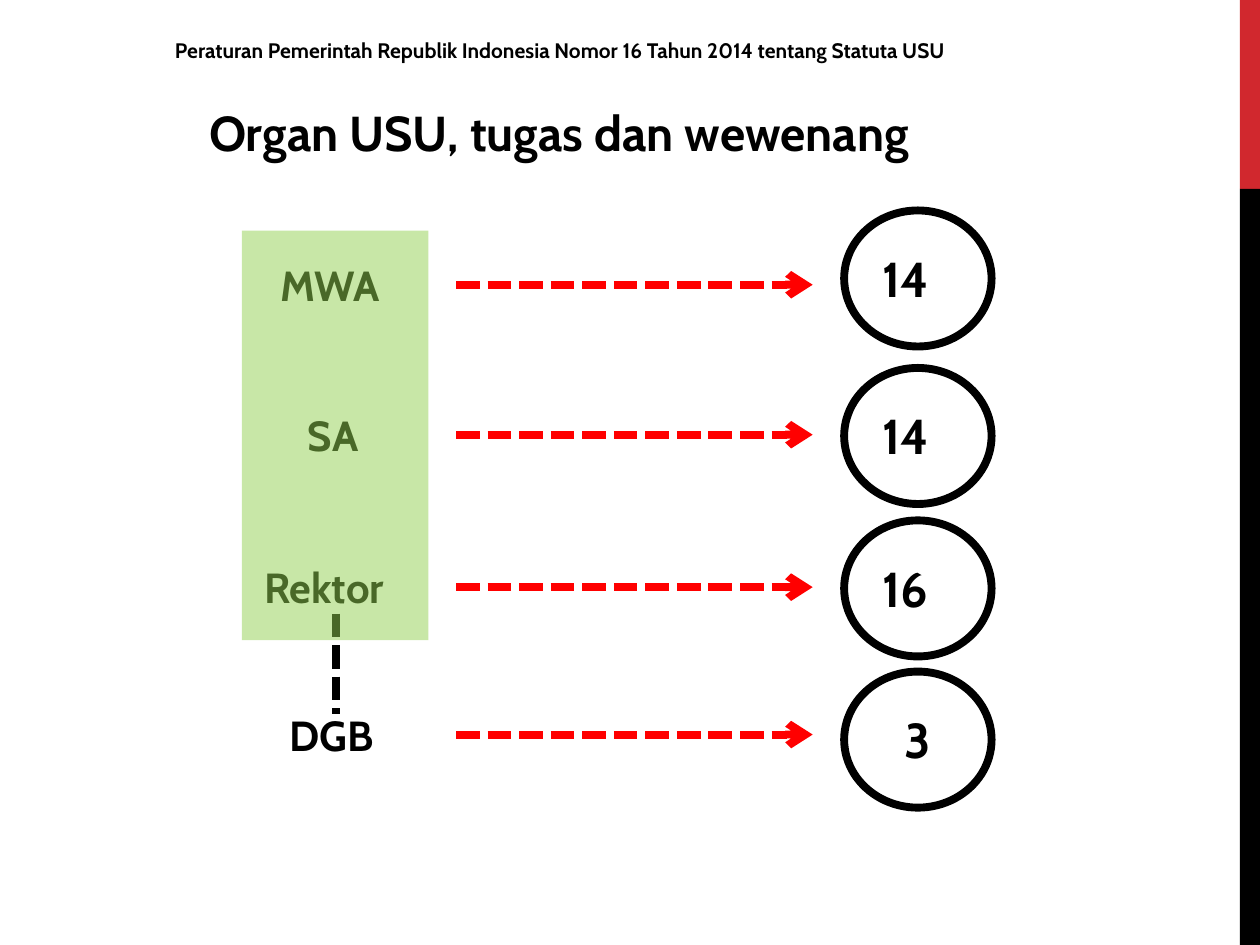
from dataclasses import dataclass

from pptx import Presentation
from pptx.dml.color import RGBColor
from pptx.enum.dml import MSO_LINE
from pptx.enum.shapes import MSO_CONNECTOR, MSO_SHAPE
from pptx.enum.text import MSO_ANCHOR, PP_ALIGN
from pptx.oxml.ns import qn
from pptx.util import Inches, Pt
from lxml.etree import SubElement


@dataclass(frozen=True)
class Theme:
    """Colours, font and type sizes of the slide."""
    ink: str = "000000"
    accent: str = "D1282E"
    arrow: str = "FF0000"
    highlight: str = "92D050"
    font: str = "Cabin"
    title: int = 28
    label: int = 24
    note: int = 12
    stroke: float = 4.5


THEME = Theme()
AXIS = 2.67
ORGANS = [
    ("MWA", 1.08, 2.01, "14", 6.91, 0.7, 1.67),
    ("SA", 0.65, 3.2, "14", 6.91, 0.7, 2.92),
    ("Rektor", 1.34, 4.41, "16", 6.91, 0.7, 4.13),
    ("DGB", 0.94, 5.58, "3", 7.08, 0.45, 5.33),
]


def write(sp, text, size=THEME.label, color=THEME.ink, bold=True):
    """Put one left-aligned formatted line of text in a shape."""
    tf = sp.text_frame
    tf.word_wrap = True
    tf.vertical_anchor = MSO_ANCHOR.TOP
    p = tf.paragraphs[0]
    p.alignment = PP_ALIGN.LEFT
    r = p.add_run()
    r.text = text
    r.font.name = THEME.font
    r.font.size = Pt(size)
    r.font.bold = bold
    r.font.color.rgb = RGBColor.from_string(color)


def add_text(s, text, x, y, w, h, **fmt):
    """Add a text box."""
    write(s.shapes.add_textbox(Inches(x), Inches(y), Inches(w), Inches(h)), text, **fmt)


def add_title(s, text, x, y, w, h):
    """Move and fill the title placeholder."""
    sp = s.shapes.title
    sp.left, sp.top, sp.width, sp.height = map(Inches, (x, y, w, h))
    write(sp, text, size=THEME.title)


def add_block(s, x, y, w, h, color, opacity=100):
    """Add a filled rectangle, optionally translucent."""
    sp = s.shapes.add_shape(MSO_SHAPE.RECTANGLE, Inches(x), Inches(y), Inches(w), Inches(h))
    sp.shadow.inherit = False
    sp.line.fill.background()
    sp.fill.solid()
    sp.fill.fore_color.rgb = RGBColor.from_string(color)
    if opacity < 100:
        clr = sp.fill._xPr.find(qn("a:solidFill"))[0]
        SubElement(clr, qn("a:alpha")).set("val", str(opacity * 1000))


def add_ring(s, x, y, w, h):
    """Add an unfilled outlined ellipse."""
    sp = s.shapes.add_shape(MSO_SHAPE.OVAL, Inches(x), Inches(y), Inches(w), Inches(h))
    sp.shadow.inherit = False
    sp.fill.background()
    sp.line.color.rgb = RGBColor.from_string(THEME.ink)
    sp.line.width = Pt(THEME.stroke)


def add_dashes(s, x1, y1, x2, y2, color, arrow=False):
    """Add a dashed line, optionally with an arrowhead at its end."""
    c = s.shapes.add_connector(MSO_CONNECTOR.STRAIGHT, Inches(x1), Inches(y1), Inches(x2), Inches(y2))
    c.line.color.rgb = RGBColor.from_string(color)
    c.line.width = Pt(THEME.stroke)
    c.line.dash_style = MSO_LINE.SQUARE_DOT
    ln = c.line._get_or_add_ln()
    ln.find(qn("a:prstDash")).set("val", "sysDash")
    if arrow:
        SubElement(ln, qn("a:tailEnd")).set("type", "arrow")
    SubElement(c._element.spPr, qn("a:effectLst"))


def add_organ(s, name, name_w, name_y, count, count_x, count_w, ring_y):
    """Add one organ with its arrow and its circled number of duties."""
    add_text(s, name, AXIS - name_w / 2, name_y, name_w, 0.5)
    add_dashes(s, 3.62, name_y + 0.25, 6.45, name_y + 0.25, THEME.arrow, arrow=True)
    add_ring(s, 6.7, ring_y, 1.17, 1.08)
    add_text(s, count, count_x, ring_y + 0.25, count_w, 0.57, size=THEME.title)


def main():
    """Build and save the slide."""
    prs = Presentation()
    prs.slide_width, prs.slide_height = Inches(10), Inches(7.5)
    s = prs.slides.add_slide(prs.slide_layouts[5])
    add_block(s, 9.84, 0, 0.16, 1.5, THEME.accent)
    add_block(s, 9.84, 1.5, 0.16, 6, THEME.ink)
    add_title(s, "Organ USU, tugas dan wewenang", 1.56, 0.76, 6.87, 0.57)
    add_text(s, "Peraturan Pemerintah Republik Indonesia Nomor 16 Tahun 2014 tentang Statuta USU",
             1.29, 0.25, 7.42, 0.3, size=THEME.note)
    for organ in ORGANS:
        add_organ(s, *organ)
    add_dashes(s, AXIS, 4.87, AXIS, 5.67, THEME.ink)
    add_block(s, 1.92, 1.83, 1.48, 3.25, THEME.highlight, opacity=50)
    prs.save("out.pptx")


if __name__ == "__main__":
    main()
